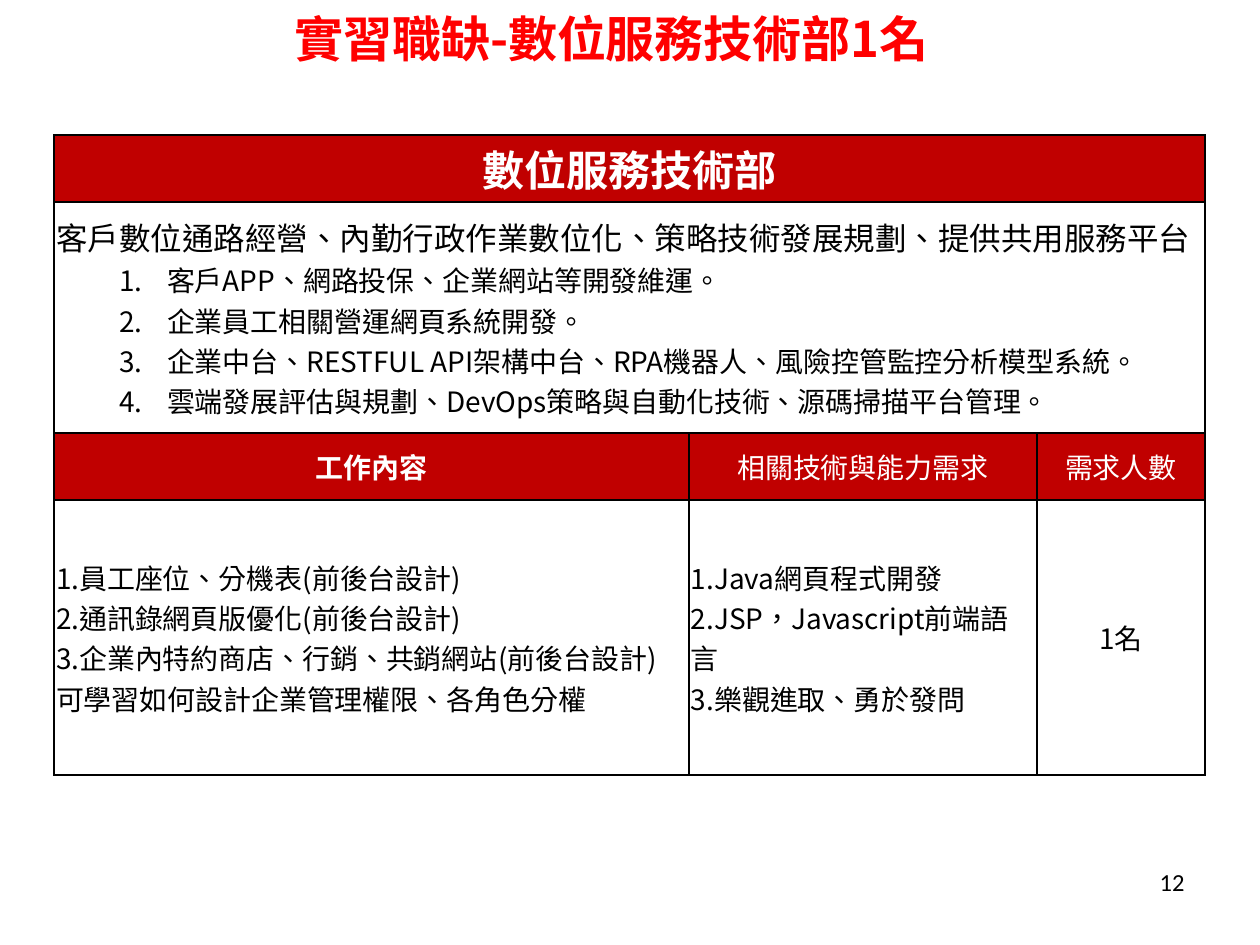
from lxml.etree import SubElement
from pptx import Presentation
from pptx.dml.color import RGBColor
from pptx.enum.lang import MSO_LANGUAGE_ID
from pptx.enum.text import MSO_ANCHOR, PP_ALIGN
from pptx.oxml.ns import qn
from pptx.util import Emu, Pt

TITLE = "實習職缺-數位服務技術部1名"
PAGE_NUMBER = "12"
DEPARTMENT = "數位服務技術部"
MISSION = "客戶數位通路經營、內勤行政作業數位化、策略技術發展規劃、提供共用服務平台"
DUTIES = [
    "客戶APP、網路投保、企業網站等開發維運。",
    "企業員工相關營運網頁系統開發。",
    "企業中台、RESTFUL API架構中台、RPA機器人、風險控管監控分析模型系統。",
    "雲端發展評估與規劃、DevOps策略與自動化技術、源碼掃描平台管理。",
]
HEADERS = ["工作內容", "相關技術與能力需求", "需求人數"]
DETAILS = [
    [
        "1.員工座位、分機表(前後台設計)",
        "2.通訊錄網頁版優化(前後台設計)",
        "3.企業內特約商店、行銷、共銷網站(前後台設計)",
        "可學習如何設計企業管理權限、各角色分權",
    ],
    ["1.Java網頁程式開發", "2.JSP，Javascript前端語言", "3.樂觀進取、勇於發問"],
    ["1名"],
]
COLUMN_WIDTHS = [635, 348, 168]
ROW_HEIGHTS = [67, 231, 67, 275]

RED, WHITE, BLACK = "C00000", "FFFFFF", "000000"
CJK_FONT = "Noto Sans CJK SC"
PX = 914400 / 126


def px(value):
    return Emu(round(value * PX))


def color(value):
    return RGBColor.from_string(value)


def write(frame, lines, size, ink=BLACK, bold=False, align=PP_ALIGN.LEFT,
          font=CJK_FONT, numbered=False, append=False):
    for index, line in enumerate(lines):
        first = index == 0 and not append
        paragraph = frame.paragraphs[0] if first else frame.add_paragraph()
        paragraph.text = line
        paragraph.alignment = align
        if numbered:
            paragraph.level = 1
            properties = paragraph._p.get_or_add_pPr()
            properties.set("marL", str(px(111)))
            properties.set("indent", str(px(-48)))
            SubElement(properties, qn("a:buFont"), typeface="+mj-lt")
            SubElement(properties, qn("a:buAutoNum"), type="arabicPeriod")
        paragraph.font.name = font
        paragraph.font.size = Pt(size)
        paragraph.font.bold = bold
        paragraph.font.color.rgb = color(ink)
        paragraph.font.language_id = MSO_LANGUAGE_ID.TRADITIONAL_CHINESE
        defaults = paragraph._p.pPr.find(qn("a:defRPr"))
        SubElement(defaults, qn("a:ea"), typeface=font)


def add_text(slide, box, anchor, text, size, **style):
    frame = slide.shapes.add_textbox(*map(px, box)).text_frame
    frame.word_wrap = True
    frame.vertical_anchor = anchor
    write(frame, [text], size, **style)


def format_cell(cell, fill):
    cell.margin_left = cell.margin_right = px(2)
    cell.margin_top = cell.margin_bottom = 0
    cell.vertical_anchor = MSO_ANCHOR.MIDDLE
    properties = cell._tc.get_or_add_tcPr()
    for side in ("lnL", "lnR", "lnT", "lnB"):
        border = SubElement(properties, qn(f"a:{side}"), w=str(Pt(1)))
        border_fill = SubElement(border, qn("a:solidFill"))
        SubElement(border_fill, qn("a:srgbClr"), val=BLACK)
    cell.fill.solid()
    cell.fill.fore_color.rgb = color(fill)


def add_job_table(slide):
    table = slide.shapes.add_table(
        len(ROW_HEIGHTS), len(COLUMN_WIDTHS), px(54), px(135),
        px(sum(COLUMN_WIDTHS)), px(sum(ROW_HEIGHTS))).table
    table.first_row = table.horz_banding = False
    for column, width in zip(table.columns, COLUMN_WIDTHS):
        column.width = px(width)
    for row, height, fill in zip(table.rows, ROW_HEIGHTS, [RED, WHITE] * 2):
        row.height = px(height)
        for cell in row.cells:
            format_cell(cell, fill)
    for row in (0, 1):
        table.cell(row, 0).merge(table.cell(row, len(COLUMN_WIDTHS) - 1))

    write(table.cell(0, 0).text_frame, [DEPARTMENT], 24, WHITE, True, PP_ALIGN.CENTER)
    overview = table.cell(1, 0).text_frame
    write(overview, [MISSION], 18)
    write(overview, DUTIES, 16, numbered=True, append=True)
    for index, (header, lines) in enumerate(zip(HEADERS, DETAILS)):
        write(table.cell(2, index).text_frame, [header], 16, WHITE, index == 0, PP_ALIGN.CENTER)
        align = PP_ALIGN.CENTER if len(lines) == 1 else PP_ALIGN.LEFT
        write(table.cell(3, index).text_frame, lines, 16, align=align)


def main():
    presentation = Presentation()
    presentation.slide_width, presentation.slide_height = px(1260), px(945)
    slide = presentation.slides.add_slide(presentation.slide_layouts[6])
    add_text(slide, (282, 0, 943, 76), MSO_ANCHOR.MIDDLE, TITLE, 28, ink="FF0000", bold=True)
    add_job_table(slide)
    add_text(slide, (903, 861, 294, 66), MSO_ANCHOR.TOP, PAGE_NUMBER, 14,
             align=PP_ALIGN.RIGHT, font="Calibri")
    presentation.save("out.pptx")


if __name__ == "__main__":
    main()
